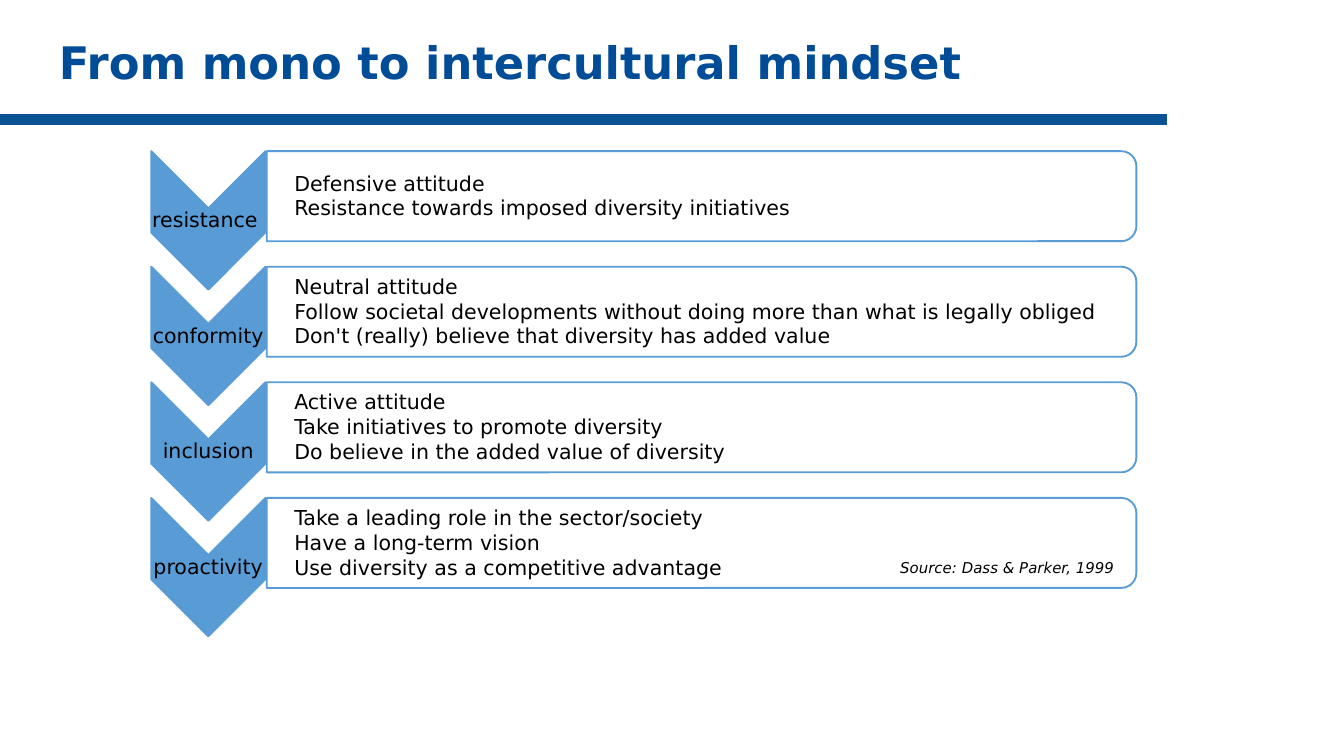
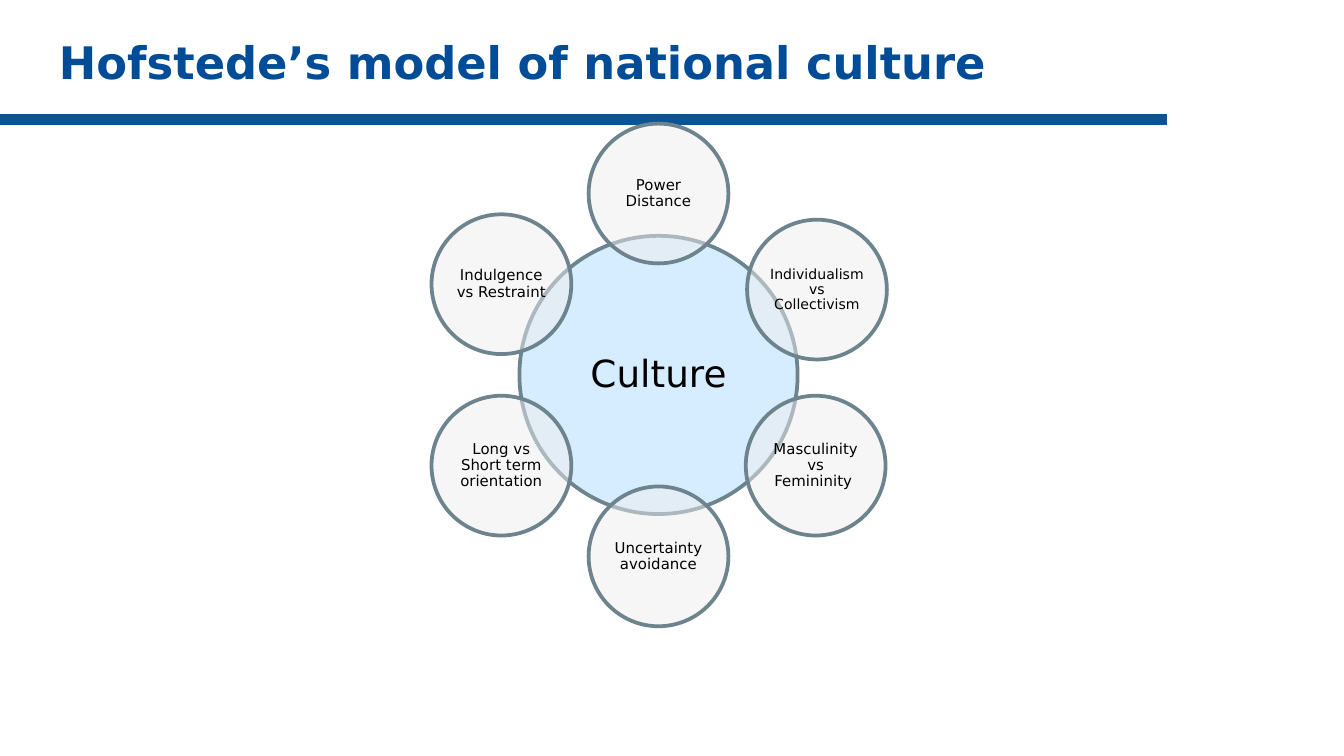
import math

from lxml import etree
from pptx import Presentation
from pptx import util as u
from pptx.dml.color import RGBColor
from pptx.enum import shapes, text
from pptx.oxml.ns import qn

TITLE_BLUE = RGBColor(0x00, 0x4C, 0x97)
BAND_BLUE = RGBColor(0x0B, 0x53, 0x94)
STAGE_BLUE = RGBColor(0x59, 0x9B, 0xD5)
CULTURE_BLUE = RGBColor(0xAF, 0xDD, 0xFF)
DIMENSION_GREY = RGBColor(0xEE, 0xEE, 0xEE)
RIM_GREY = RGBColor(0x6D, 0x83, 0x8E)
WHITE = RGBColor(0xFF, 0xFF, 0xFF)
BLACK = RGBColor(0, 0, 0)
FONT = "DejaVu Sans"

MINDSET_TITLE = "From mono to intercultural mindset"
STAGES = [
    ("resistance ", ["Defensive attitude",
                     "Resistance towards imposed diversity initiatives"]),
    ("conformity", ["Neutral attitude",
                    "Follow societal developments without doing more than what is legally obliged",
                    "Don't (really) believe that diversity has added value"]),
    ("inclusion", ["Active attitude",
                   "Take initiatives to promote diversity",
                   "Do believe in the added value of diversity"]),
    ("proactivity", ["Take a leading role in the sector/society",
                     "Have a long-term vision",
                     "Use diversity as a competitive advantage"]),
]
CITATION = "Source: Dass & Parker, 1999"

CULTURE_TITLE = "Hofstede’s model of national culture"
HUB = "Culture"
DIMENSIONS = [
    ("Power Distance", 8, (0, 0)),
    ("Individualism vs Collectivism", 7.5, (0.01, 0.04)),
    ("Masculinity vs Femininity ", 8, (0, 0)),
    ("Uncertainty avoidance", 8, (0, 0)),
    ("Long vs Short term orientation", 8, (0, 0)),
    ("Indulgence vs Restraint", 8, (0, 0)),
]

SLIDE_WIDTH = u.Inches(10)
SLIDE_HEIGHT = SLIDE_WIDTH * 9 // 16
STAGE_TOP, STAGE_PITCH = 1.12, 0.86
HUB_X, HUB_Y, ORBIT = 4.9, 2.79, 1.35
HUB_SIZE, DIMENSION_SIZE = 2.07, 1.04

CENTRED = {"alignment": text.PP_ALIGN.CENTER, "line_spacing": 0.89}
LISTED = {"line_spacing": 0.89}


def apply(target, values):
    for key, value in values.items():
        setattr(target, key, value)


def inches(*lengths):
    return [u.Inches(length) for length in lengths]


def add_text(slide, box, lines, size, insets, font=None, paragraph=None, ink=BLACK,
             anchor=text.MSO_ANCHOR.TOP, indent=0, gap=0):
    frame = slide.shapes.add_textbox(*inches(*box)).text_frame
    sides = ("margin_left", "margin_top", "margin_right", "margin_bottom")
    apply(frame, dict(zip(sides, inches(*insets))))
    apply(frame, {"word_wrap": True, "vertical_anchor": anchor})
    for number, line in enumerate(lines):
        para = frame.add_paragraph() if number else frame.paragraphs[0]
        apply(para, paragraph or {})
        if number and gap:
            para.space_before = u.Pt(gap)
        if indent:
            properties = para._p.get_or_add_pPr()
            for key in ("marL", "indent"):
                properties.set(key, str(u.Inches(indent)))
        run = para.add_run()
        run.text = line
        apply(run.font, {"name": FONT, "size": u.Pt(size), **(font or {})})
        run.font.color.rgb = ink


def add_outline(slide, preset, centre, size, fill, rim, width,
                opacity=100, rotation=0, adjustments=()):
    left, top = (c - s / 2 for c, s in zip(centre, size))
    outline = slide.shapes.add_shape(preset, *inches(left, top, *size))
    outline.shadow.inherit = False
    outline.rotation = rotation
    for number, value in enumerate(adjustments):
        outline.adjustments[number] = value
    outline.fill.solid()
    outline.fill.fore_color.rgb = fill
    outline.line.color.rgb = rim
    outline.line.width = u.Pt(width)
    if opacity < 100:
        colour = outline._element.spPr.find(qn("a:solidFill"))[0]
        etree.SubElement(colour, qn("a:alpha")).set("val", str(opacity * 1000))


def add_titled_slide(deck, title):
    slide = deck.slides.add_slide(deck.slide_layouts[6])
    band = slide.shapes.add_connector(
        shapes.MSO_CONNECTOR.STRAIGHT, *inches(0, 0.89, 8.68, 0.89))
    band.line.color.rgb = BAND_BLUE
    band.line.width = u.Pt(6)
    etree.SubElement(band._element.spPr, qn("a:effectLst"))
    add_text(slide, (0.34, 0.16, 9.32, 0.63), [title], 24, [0.1] * 4,
             {"bold": True}, ink=TITLE_BLUE)
    return slide


def add_stage(slide, top, stage, attitudes):
    add_outline(slide, shapes.MSO_SHAPE.CHEVRON, (1.55, top + 0.52), (1.03, 0.85),
                STAGE_BLUE, STAGE_BLUE, 1, rotation=90, adjustments=[0.5])
    add_text(slide, (1.12, top + 0.37, 0.86, 0.31), [stage], 11, [0.01] * 4,
             paragraph=CENTRED, anchor=text.MSO_ANCHOR.MIDDLE)
    add_outline(slide, shapes.MSO_SHAPE.ROUND_2_SAME_RECTANGLE, (5.22, top + 0.34),
                (0.67, 6.47), WHITE, STAGE_BLUE, 1, 89, 90, [0.167, 0])
    add_text(slide, (1.98, top + 0.04, 6.43, 0.61), attitudes, 11, [0.09, 0.01, 0.01, 0.01],
             paragraph=LISTED, anchor=text.MSO_ANCHOR.MIDDLE, indent=0.06, gap=1.6)


def add_circle(slide, centre, diameter, label, size, fill, inset):
    add_outline(slide, shapes.MSO_SHAPE.OVAL, centre, (diameter, diameter),
                fill, RIM_GREY, 2, 50)
    side = diameter / math.sqrt(2)
    add_text(slide, (centre[0] - side / 2, centre[1] - side / 2, side, side),
             [label], size, [inset] * 4, anchor=text.MSO_ANCHOR.MIDDLE,
             paragraph={**CENTRED, "line_spacing": 0.9, "space_after": u.Pt(size * 0.35)})


def main():
    deck = Presentation()
    apply(deck, {"slide_width": SLIDE_WIDTH, "slide_height": SLIDE_HEIGHT})

    mindset = add_titled_slide(deck, MINDSET_TITLE)
    for number, (stage, attitudes) in enumerate(STAGES):
        add_stage(mindset, STAGE_TOP + number * STAGE_PITCH, stage, attitudes)
    add_text(mindset, (6.6, 4.11, 2.04, 0.28), [CITATION], 8,
             [0.1, 0.05, 0.1, 0.05], {"italic": True})

    culture = add_titled_slide(deck, CULTURE_TITLE)
    add_circle(culture, (HUB_X, HUB_Y), HUB_SIZE, HUB, 20, CULTURE_BLUE, 0.03)
    for number, (dimension, size, (right, down)) in enumerate(DIMENSIONS):
        angle = math.tau * number / len(DIMENSIONS)
        centre = (HUB_X + ORBIT * math.sin(angle) + right,
                  HUB_Y - ORBIT * math.cos(angle) + down)
        add_circle(culture, centre, DIMENSION_SIZE, dimension, size, DIMENSION_GREY, 0.01)

    deck.save("out.pptx")


if __name__ == "__main__":
    main()
